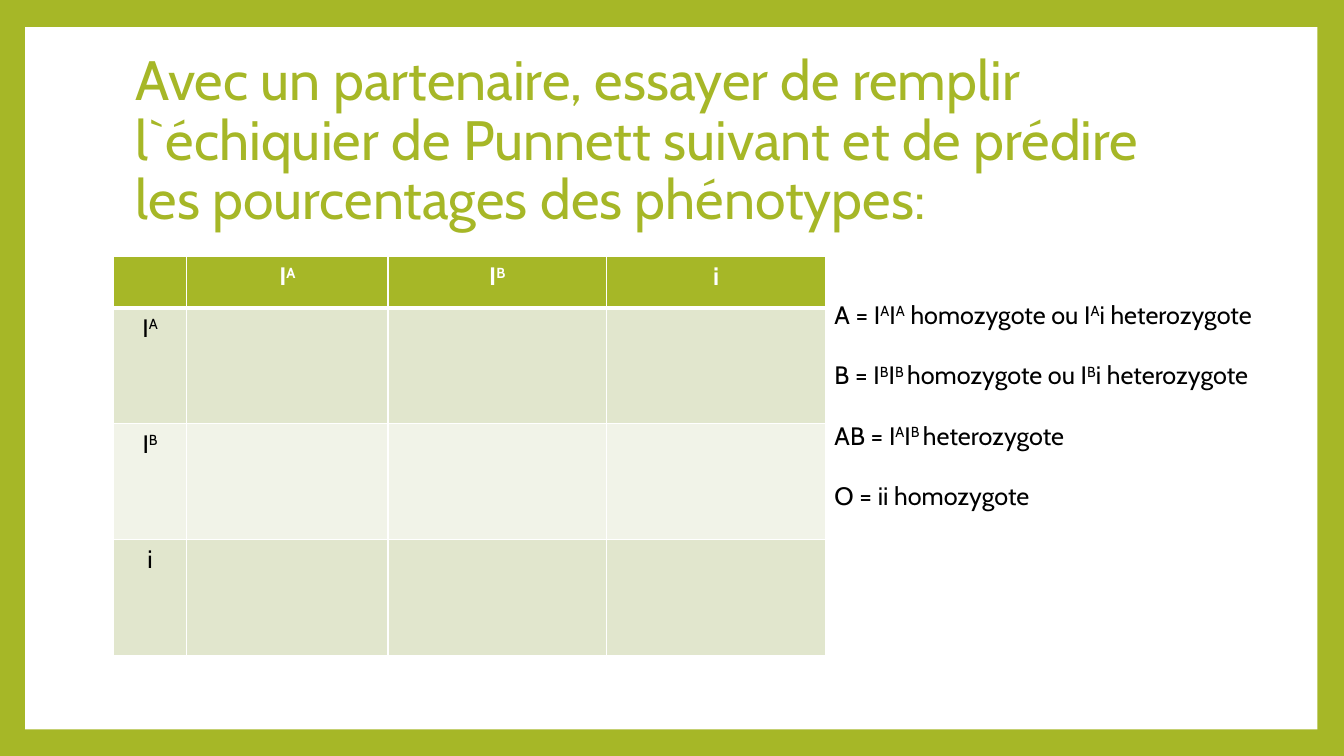
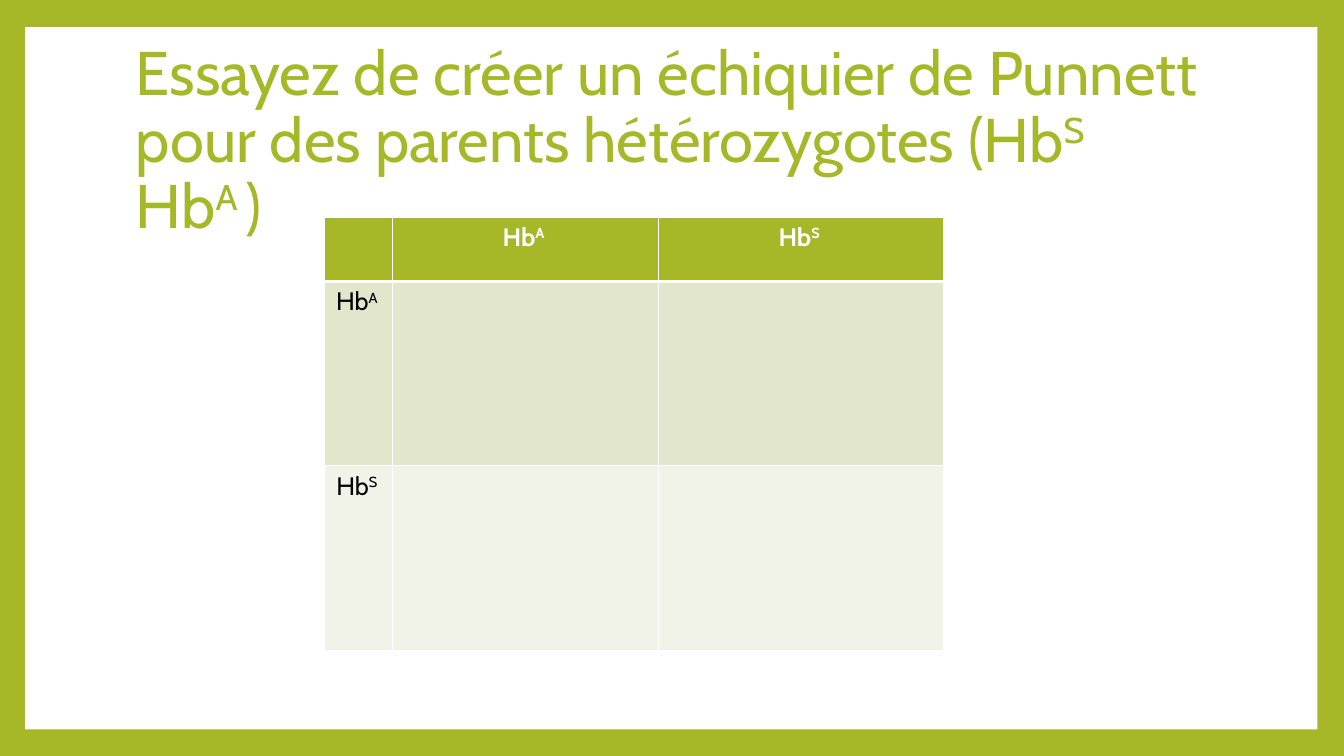
from lxml.etree import SubElement
from pptx import Presentation
from pptx.dml.color import RGBColor
from pptx.enum.shapes import MSO_SHAPE
from pptx.enum.text import MSO_ANCHOR, PP_ALIGN
from pptx.oxml.ns import qn
from pptx.util import Pt

FONT = "Cabin"
COLORS = {
    "green": "A6B727",
    "white": "FFFFFF",
    "black": "000000",
    "band_dark": "E1E6CD",
    "band_light": "F1F3E8",
}


def rgb(name):
    return RGBColor.from_string(COLORS[name])


def write(p, text, size=18, color="black", bold=False, align=None,
          line_spacing=None, space_after=None):
    """Fill a paragraph; parts between carets, as in I^A^, are superscript."""
    if align is not None:
        p.alignment = align
    if line_spacing is not None:
        p.line_spacing = line_spacing
    if space_after is not None:
        p.space_after = Pt(space_after)
    for i, part in enumerate(text.split("^")):
        if not part:
            continue
        r = p.add_run()
        r.text = part
        r.font.name = FONT
        r.font.size = Pt(size)
        r.font.bold = bold
        r.font.color.rgb = rgb(color)
        if i % 2:
            r._r.get_or_add_rPr().set("baseline", "30000")


def set_borders(cell, color="white", top=1, bottom=1):
    tcPr = cell._tc.get_or_add_tcPr()
    for side, width in (("L", 1), ("R", 1), ("T", top), ("B", bottom)):
        ln = SubElement(tcPr, qn(f"a:ln{side}"), w=str(Pt(width)))
        fill = SubElement(ln, qn("a:solidFill"))
        SubElement(fill, qn("a:srgbClr"), val=COLORS[color])


class Deck:
    """The shared slide style and the slide being built."""

    def __init__(self):
        self.prs = Presentation()
        self.prs.slide_width, self.prs.slide_height = Pt(960), Pt(540)
        self.s = None

    def new_slide(self, title, title_size):
        self.s = self.prs.slides.add_slide(self.prs.slide_layouts[6])
        bg = self.s.background.fill
        bg.solid()
        bg.fore_color.rgb = rgb("green")
        self.panel(18, 19.4, 923, 501.6)
        self.text([title], 90, 48.2, 777.6, 106.6, anchor=MSO_ANCHOR.MIDDLE,
                  size=title_size, color="green", line_spacing=0.9)

    def panel(self, x, y, w, h):
        sp = self.s.shapes.add_shape(MSO_SHAPE.RECTANGLE, Pt(x), Pt(y), Pt(w), Pt(h))
        sp.shadow.inherit = False
        sp.fill.solid()
        sp.fill.fore_color.rgb = rgb("white")
        sp.line.fill.background()

    def text(self, paragraphs, x, y, w, h, anchor=MSO_ANCHOR.TOP, **style):
        tf = self.s.shapes.add_textbox(Pt(x), Pt(y), Pt(w), Pt(h)).text_frame
        tf.word_wrap = True
        tf.vertical_anchor = anchor
        for i, text in enumerate(paragraphs):
            p = tf.add_paragraph() if i else tf.paragraphs[0]
            write(p, text, **style)

    def punnett_square(self, alleles, x, y, widths, header_height, row_height):
        """Draw an empty square with the alleles along its top and left side."""
        labels = ["", *alleles]
        n = len(labels)
        heights = [header_height] + [row_height] * len(alleles)
        table = self.s.shapes.add_table(
            n, n, Pt(x), Pt(y), Pt(sum(widths)), Pt(sum(heights))).table
        table.horz_banding = False
        for i in range(n):
            table.columns[i].width = Pt(widths[i])
            table.rows[i].height = Pt(heights[i])
        for row in range(n):
            header = row == 0
            band = "green" if header else "band_dark" if row % 2 else "band_light"
            for col in range(n):
                cell = table.cell(row, col)
                set_borders(cell, top=3 if row == 1 else 1, bottom=3 if header else 1)
                cell.fill.solid()
                cell.fill.fore_color.rgb = rgb(band)
                if header or col == 0:
                    write(cell.text_frame.paragraphs[0], labels[row + col],
                          color="white" if header else "black",
                          bold=header, align=PP_ALIGN.CENTER)


def main():
    deck = Deck()

    deck.new_slide("Avec un partenaire, essayer de remplir l`échiquier de Punnett "
                   "suivant et de prédire les pourcentages des phénotypes:", 39.6)
    deck.punnett_square(["I^A^", "I^B^", "i"], 81, 183.2,
                        [52.4, 143.8, 156.2, 156.2], 36.6, 82.8)
    deck.text(["A = I^A^I^A^ homozygote ou I^A^i heterozygote",
               "B = I^B^I^B ^homozygote ou I^B^i heterozygote",
               "AB = I^A^I^B ^heterozygote",
               "O = ii homozygote"],
              589, 210.2, 341.3, 247, space_after=21.6)

    deck.new_slide("Essayez de créer un échiquier de Punnett pour des parents "
                   "hétérozygotes (Hb^S ^Hb^A ^)", 44)
    deck.punnett_square(["Hb^A ^", "Hb^S ^"], 232, 155,
                        [48.2, 190, 203.8], 46, 131.8)

    deck.prs.save("out.pptx")


if __name__ == "__main__":
    main()
